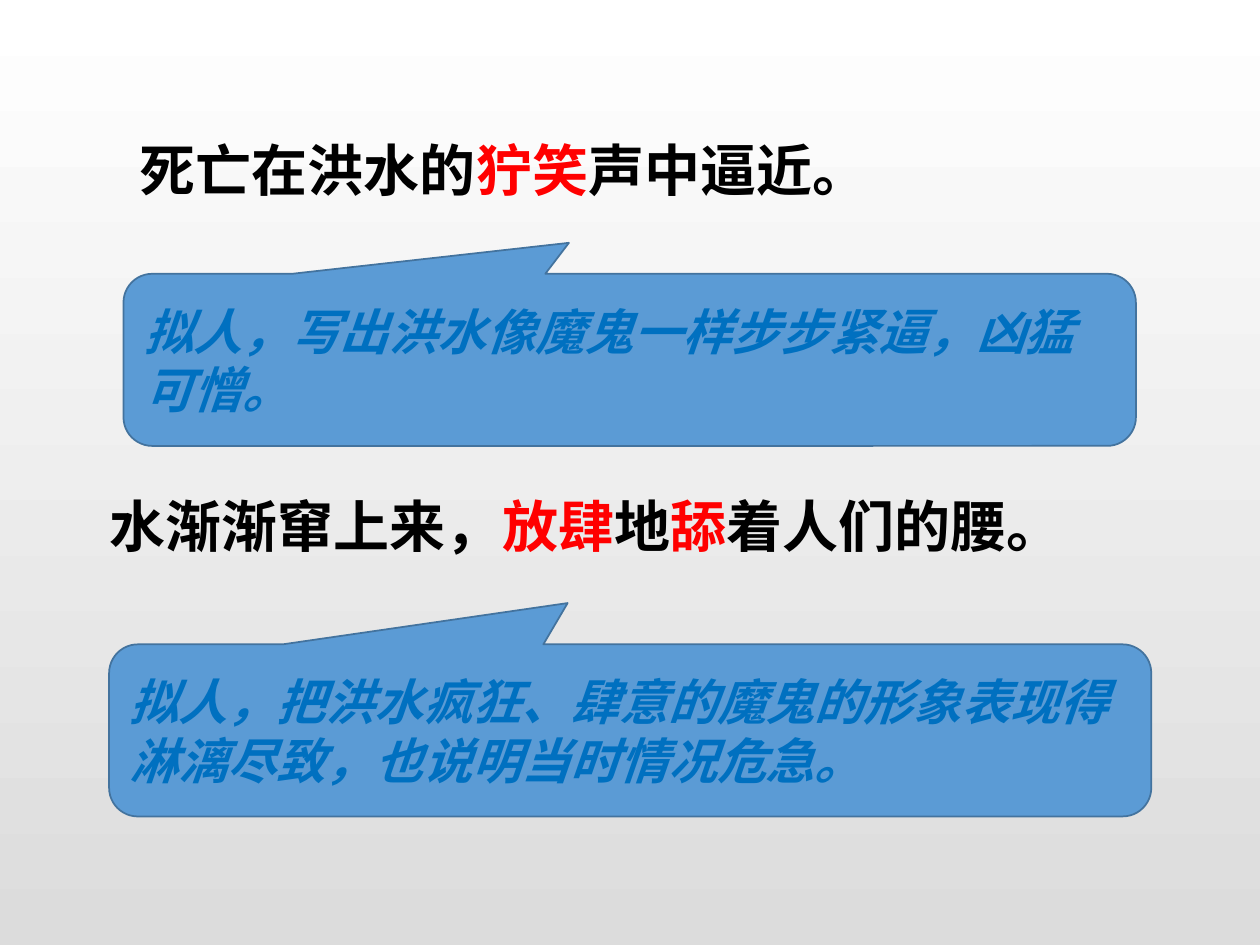
from pptx import Presentation
from pptx.dml.color import RGBColor
from pptx.enum.shapes import MSO_SHAPE as Kind
from pptx.enum.text import MSO_ANCHOR as Anchor, MSO_AUTO_SIZE as Fit, PP_ALIGN as Align
from pptx.oxml.ns import qn
from pptx.util import Cm, Pt

FONT = "Noto Sans CJK SC"
BLACK, RED, BLUE = "000000", "FF0000", "0070C0"


def color(code):
    return RGBColor.from_string(code)


def style(run, size, code, italic=False):
    font = run.font
    font.name, font.size = FONT, Pt(size)
    font.bold, font.italic = True, italic
    font.color.rgb = color(code)
    # East Asian typeface follows the Latin one
    east = run._r.get_or_add_rPr().makeelement(qn("a:ea"), {"typeface": FONT})
    font._element.find(qn("a:latin")).addnext(east)


def paint(slide):
    fill = slide.background.fill
    fill.gradient()
    fill.gradient_angle = 270
    for stop, place, code in zip(fill.gradient_stops, (0, 1), ("FFFFFF", "DCDCDC")):
        stop.position = place
        stop.color.rgb = color(code)


def quote(slide, box, parts, space):
    """Sentence with its key words in red."""
    frame = slide.shapes.add_textbox(*map(Cm, box)).text_frame
    frame.word_wrap = True
    frame.auto_size = Fit.SHAPE_TO_FIT_TEXT
    para = frame.paragraphs[0]
    para.line_spacing = space
    for text, code in parts:
        run = para.add_run()
        run.text = text
        style(run, 32, code)


def note(slide, box, text, tail):
    """Callout that explains the sentence above it."""
    shape = slide.shapes.add_shape(Kind.ROUNDED_RECTANGULAR_CALLOUT, *map(Cm, box))
    shape.shadow.inherit = False
    for i, value in enumerate((*tail, 0.167)):
        shape.adjustments[i] = value
    shape.fill.solid()
    shape.fill.fore_color.rgb = color("5B9BD5")
    shape.line.color.rgb = color("43739E")
    shape.line.width = Pt(1)
    frame = shape.text_frame
    frame.word_wrap = True
    frame.vertical_anchor = Anchor.MIDDLE
    frame.text = text
    para = frame.paragraphs[0]
    para.alignment = Align.LEFT
    style(para.runs[0], 28, BLUE, italic=True)


def main():
    deck = Presentation()
    deck.slide_width, deck.slide_height = Cm(25.4), Cm(19.05)
    slide = deck.slides.add_slide(deck.slide_layouts[6])
    paint(slide)

    # First sentence and its note
    quote(slide, (2.57, 2.34, 18.59, 1.68),
          [("死亡在洪水的", BLACK), ("狞笑", RED), ("声中逼近。", BLACK)], 1.2)
    note(slide, (2.49, 5.52, 20.41, 3.47),
         "拟人，写出洪水像魔鬼一样步步紧逼，凶猛可憎。", (-0.06, -0.68))

    # Second sentence and its note
    quote(slide, (1.96, 9.78, 19.81, 1.63),
          [("水渐渐窜上来，", BLACK), ("放肆", RED), ("地", BLACK),
           ("舔", RED), ("着人们的腰。", BLACK)], 1.0)
    note(slide, (2.2, 12.99, 21.01, 3.47),
         "拟人，把洪水疯狂、肆意的魔鬼的形象表现得淋漓尽致，也说明当时情况危急。", (-0.06, -0.74))

    deck.save("out.pptx")


if __name__ == "__main__":
    main()
